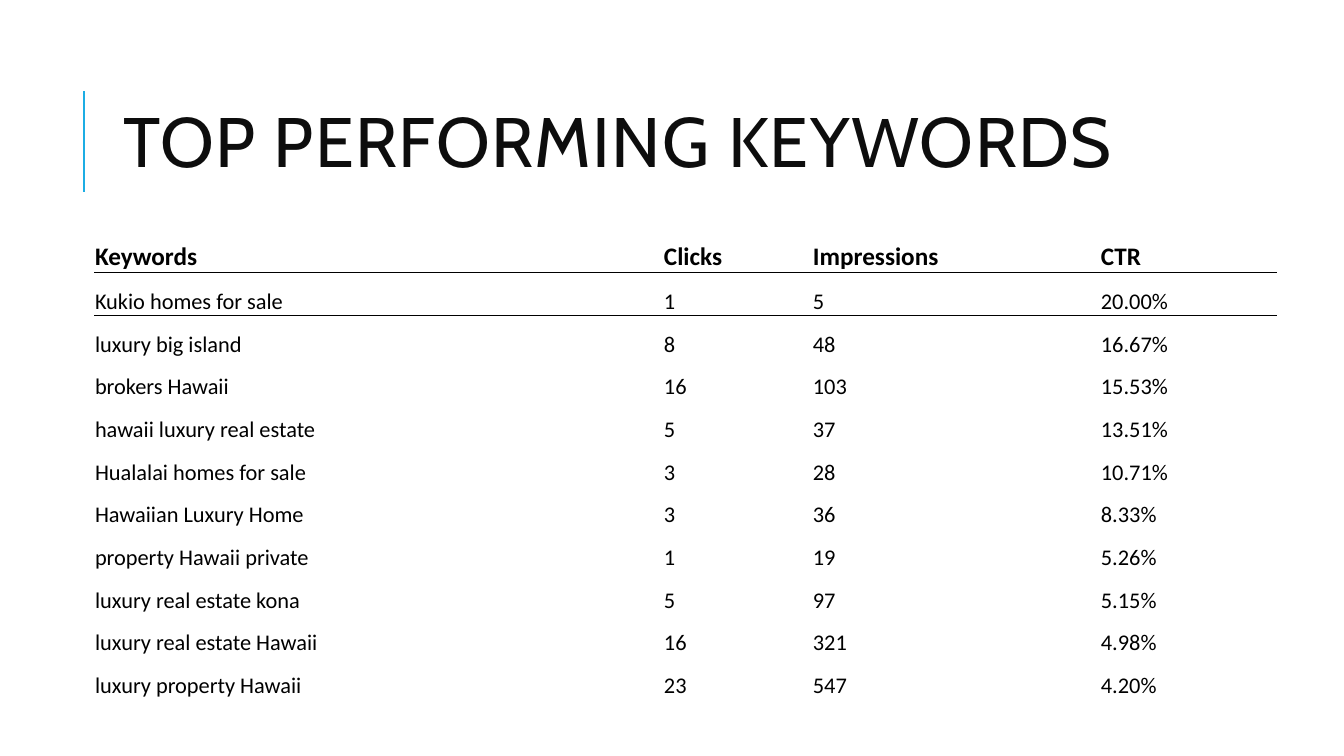
import pptx
import pptx.dml.color
import pptx.enum.shapes
import pptx.enum.text
import pptx.oxml.ns
import pptx.util
import lxml.etree

ACCENT = pptx.dml.color.RGBColor(0x1C, 0xAD, 0xE4)
TITLE_INK = pptx.dml.color.RGBColor(0x0D, 0x0D, 0x0D)
BLACK = pptx.dml.color.RGBColor(0, 0, 0)
TITLE_FONT = "Cabin"
BODY_FONT = "Calibri"
PX_PER_INCH = 100.8
NO_GRID_STYLE = "{2D5ABB26-0587-4C30-8999-92F81FD0307C}"

KEYWORDS = [
    ("Keywords", "Clicks", "Impressions", "CTR"),
    ("Kukio homes for sale", "1", "5", "20.00%"),
    ("luxury big island", "8", "48", "16.67%"),
    ("brokers Hawaii", "16", "103", "15.53%"),
    ("hawaii luxury real estate", "5", "37", "13.51%"),
    ("Hualalai homes for sale", "3", "28", "10.71%"),
    ("Hawaiian Luxury Home", "3", "36", "8.33%"),
    ("property Hawaii private", "1", "19", "5.26%"),
    ("luxury real estate kona", "5", "97", "5.15%"),
    ("luxury real estate Hawaii", "16", "321", "4.98%"),
    ("luxury property Hawaii", "23", "547", "4.20%"),
]
COLUMN_WIDTHS = (569, 149, 288, 177)
RULED_ROWS = (0, 1)


def px(length):
    """Turn pixels into EMU."""
    return pptx.util.Emu(round(length * 914400 / PX_PER_INCH))


class KeywordSlide:
    """Holds the style and the current slide."""

    def __init__(self, presentation):
        """Add a title-only slide."""
        self.slide = presentation.slides.add_slide(presentation.slide_layouts[5])

    def add_run(self, paragraph, words, font, size, color, bold=False):
        """Append one formatted run."""
        run = paragraph.add_run()
        run.text = words
        run.font.name = font
        run.font.size = pptx.util.Pt(size)
        run.font.color.rgb = color
        run.font.bold = bold
        return run

    def add_title(self, words, left, top, width, height):
        """Place and fill the title placeholder."""
        title = self.slide.shapes.title
        title.left, title.top = px(left), px(top)
        title.width, title.height = px(width), px(height)
        frame = title.text_frame
        frame.word_wrap = True
        frame.auto_size = pptx.enum.text.MSO_AUTO_SIZE.NONE
        frame.vertical_anchor = pptx.enum.text.MSO_ANCHOR.MIDDLE
        heading = frame.paragraphs[0]
        heading.alignment = pptx.enum.text.PP_ALIGN.LEFT
        heading.line_spacing = 0.8
        run = self.add_run(heading, words, TITLE_FONT, 50, TITLE_INK)
        run.font._element.set("spc", "100")

    def add_accent_line(self, x, start, end):
        """Draw the vertical accent line beside the title."""
        accent = self.slide.shapes.add_connector(
            pptx.enum.shapes.MSO_CONNECTOR.STRAIGHT, px(x), px(start), px(x), px(end))
        accent.line.color.rgb = ACCENT
        accent.line.width = pptx.util.Pt(1.5)
        lxml.etree.SubElement(accent._element.spPr, pptx.oxml.ns.qn("a:effectLst"))

    def rule_below(self, cell):
        """Give a cell a thin bottom border."""
        qn = pptx.oxml.ns.qn
        border = lxml.etree.Element(qn("a:lnB"), w=str(pptx.util.Pt(1)))
        ink = lxml.etree.SubElement(border, qn("a:solidFill"))
        lxml.etree.SubElement(ink, qn("a:srgbClr"), val=str(BLACK))
        cell._tc.get_or_add_tcPr().insert(0, border)

    def fill_cell(self, cell, words, is_header):
        """Write one table cell."""
        cell.fill.background()
        cell.vertical_anchor = pptx.enum.text.MSO_ANCHOR.BOTTOM
        cell.margin_left = cell.margin_right = cell.margin_top = px(1)
        cell.margin_bottom = 0
        self.add_run(cell.text_frame.paragraphs[0], words, BODY_FONT,
                     18 if is_header else 16, BLACK, is_header)

    def add_table(self, rows, widths, left, top, height):
        """Add the table with equal row heights."""
        table = self.slide.shapes.add_table(
            len(rows), len(widths), px(left), px(top), px(sum(widths)), px(height)).table
        table.first_row = table.horz_banding = False
        table._tbl.tblPr.find(pptx.oxml.ns.qn("a:tableStyleId")).text = NO_GRID_STYLE
        for column, width in zip(table.columns, widths):
            column.width = px(width)
        for row_index, entries in enumerate(rows):
            table.rows[row_index].height = px(height / len(rows))
            for cell, words in zip(table.rows[row_index].cells, entries):
                self.fill_cell(cell, words, row_index == 0)
                if row_index in RULED_ROWS:
                    self.rule_below(cell)


def main():
    """Build and save the keyword slide."""
    presentation = pptx.Presentation()
    presentation.slide_width = px(1344)
    presentation.slide_height = px(756)
    keyword_slide = KeywordSlide(presentation)
    keyword_slide.add_accent_line(84, 192, 91)
    keyword_slide.add_title("TOP PERFORMING KEYWORDS", 113, 65, 1072, 165)
    keyword_slide.add_table(KEYWORDS, COLUMN_WIDTHS, 94, 230, 470)
    presentation.save("out.pptx")


if __name__ == "__main__":
    main()
